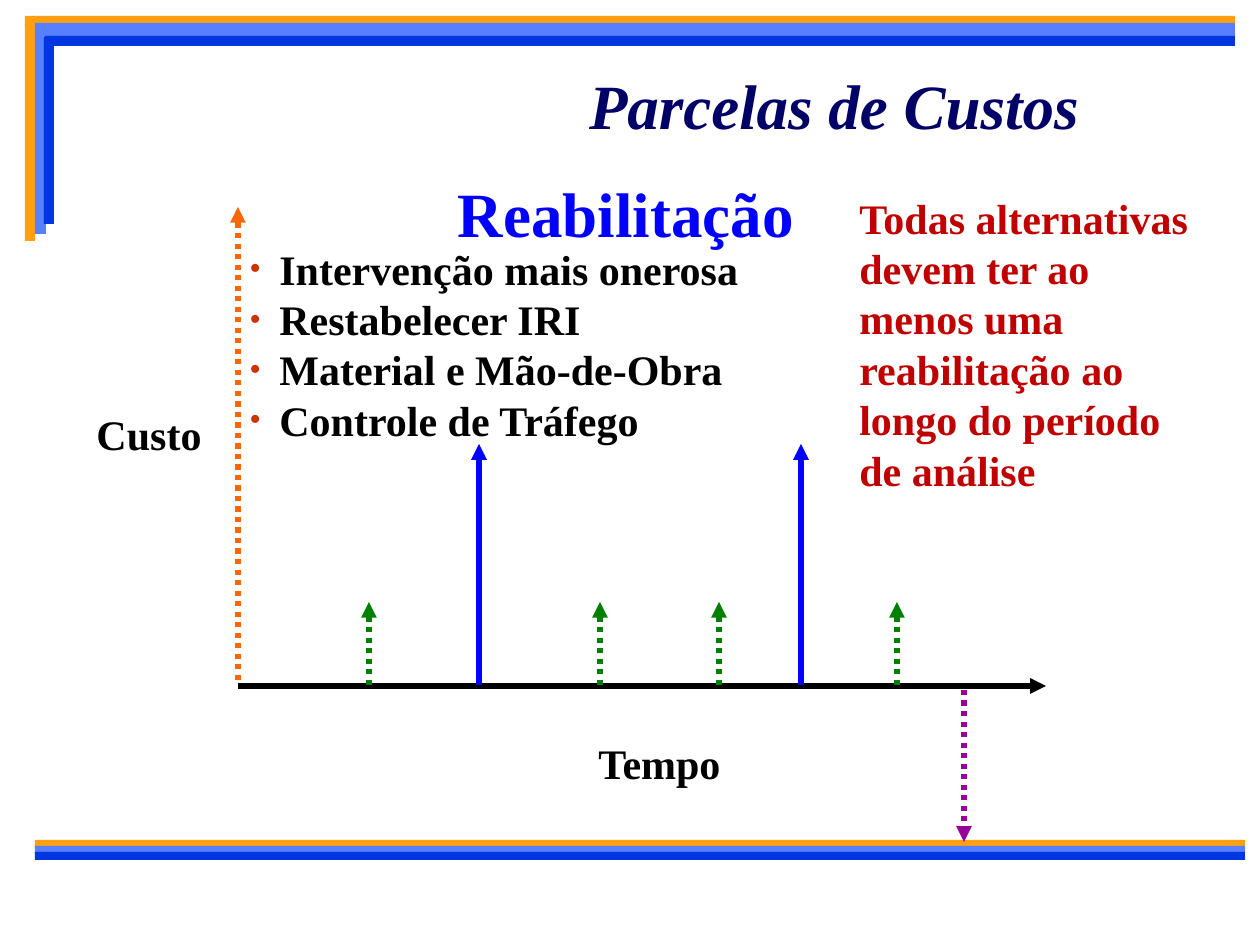
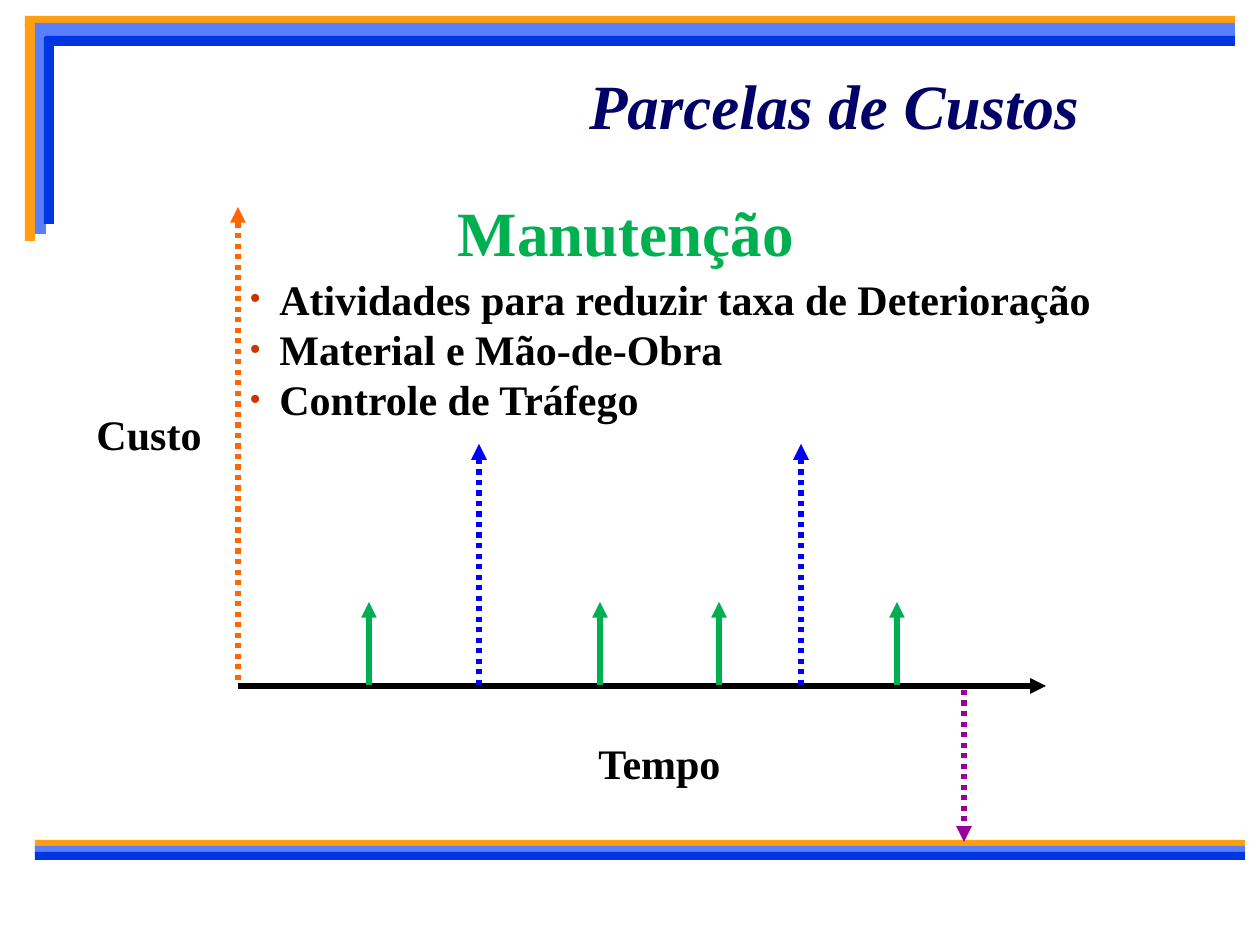
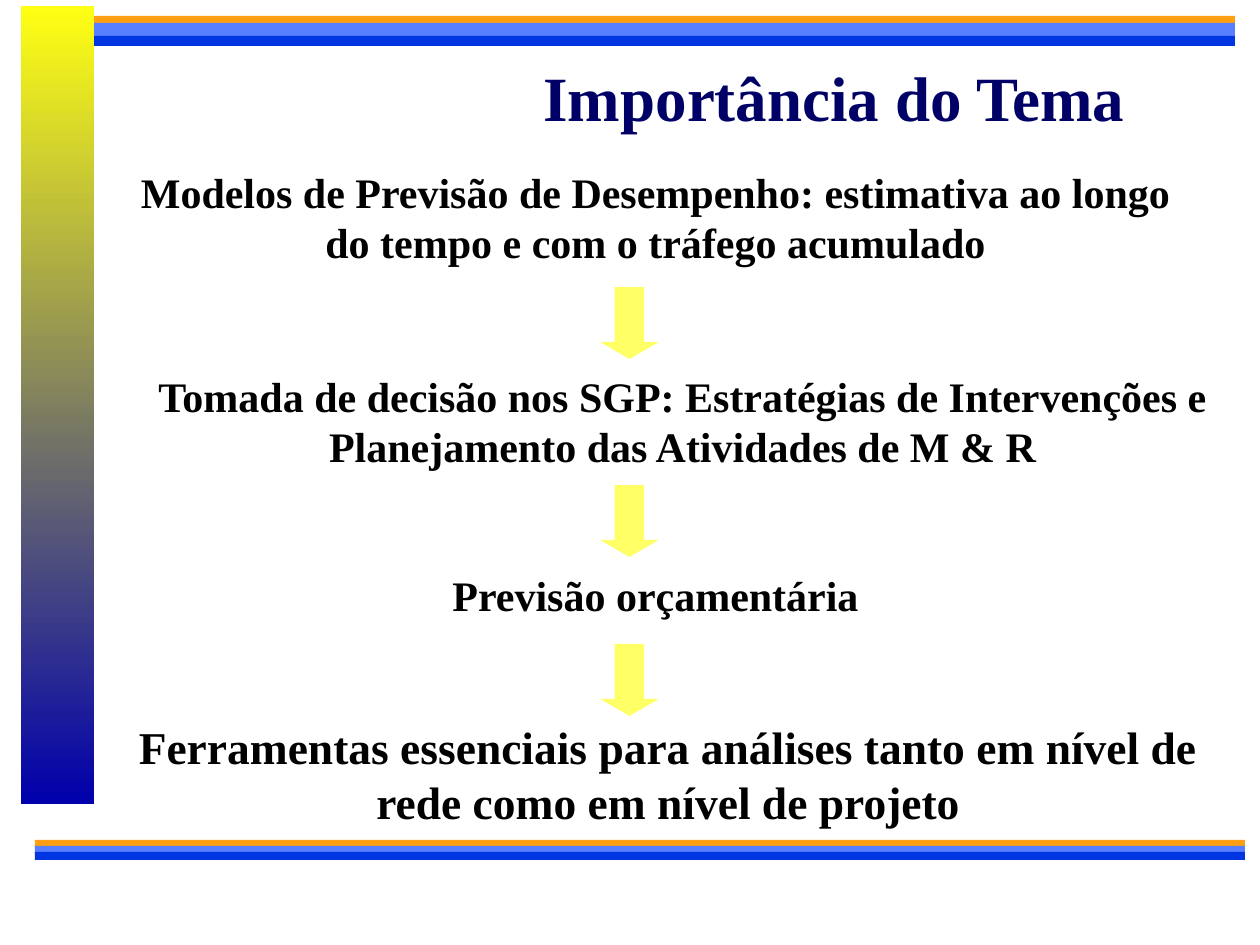
from lxml.etree import SubElement
from pptx import Presentation
from pptx.dml.color import RGBColor
from pptx.enum.dml import MSO_LINE
from pptx.enum.shapes import MSO_CONNECTOR, MSO_SHAPE
from pptx.enum.text import MSO_ANCHOR, MSO_AUTO_SIZE, PP_ALIGN
from pptx.oxml.ns import qn
from pptx.util import Emu, Pt

PX_PER_INCH = 126
FONT = "Times New Roman"
NAVY, BLACK, RED, BLUE = "000066", "000000", "C00000", "0000FF"
DARK_GREEN, GREEN, PURPLE, ORANGE = "008000", "00B050", "990099", "FF6600"
BULLET_RED, ARROW_YELLOW = "CC3300", "FFFF66"
BAND_COLORS = ("FF9F11", "577FFF", "0036E2")
SIDE_BANDS = ((25, 23, 10, 218), (35, 36, 11, 198), (44, 36, 10, 188))
TOP_BANDS = ((25, 16, 1210, 10), (35, 23, 1200, 14), (45, 36, 1190, 10))
BOTTOM_BANDS = tuple((35, 840 + 6 * row, 1210, 8) for row in range(3))
DIAGRAM_BOX = (238, 207, 808, 479)
MAINTENANCE_TIMES = (131, 362, 481, 659)
REHABILITATION_TIMES = (241, 563)


def px(*lengths):
    """Turn pixel lengths into EMU."""
    return [Emu(round(length * 914400 / PX_PER_INCH)) for length in lengths]


def rgb(color):
    """Turn a hex string into a colour."""
    return RGBColor.from_string(color)


def format_font(font, color, **values):
    """Apply the shared bold face, a colour and further format values."""
    for name, value in {"name": FONT, "bold": True, **values}.items():
        setattr(font, name, value)
    font.color.rgb = rgb(color)


def add_block(slide, kind, box, color):
    """Add a plain filled shape without outline."""
    block = slide.shapes.add_shape(kind, *px(*box))
    block.shadow.inherit = False
    block.fill.solid()
    block.fill.fore_color.rgb = rgb(color)
    block.line.fill.background()
    return block


def add_bullet(paragraph):
    """Give a paragraph a hanging red bullet."""
    properties = paragraph._p.get_or_add_pPr()
    indent = px(30)[0]
    properties.set("marL", str(indent))
    properties.set("indent", str(-indent))
    color = SubElement(properties, qn("a:buClr"))
    SubElement(color, qn("a:srgbClr"), val=BULLET_RED)
    SubElement(properties, qn("a:buSzPct"), val="80000")
    SubElement(properties, qn("a:buFont"), typeface=FONT)
    SubElement(properties, qn("a:buChar"), char="•")


def add_text(slide, box, lines, color=BLACK, size=24, align=PP_ALIGN.CENTER,
             wrap=True, bullets=False):
    """Add a text box with one paragraph for each line."""
    frame = slide.shapes.add_textbox(*px(*box)).text_frame
    frame.word_wrap = wrap
    frame.auto_size = MSO_AUTO_SIZE.SHAPE_TO_FIT_TEXT
    for index, line in enumerate(lines):
        paragraph = frame.add_paragraph() if index else frame.paragraphs[0]
        if bullets:
            add_bullet(paragraph)
        paragraph.alignment = align
        run = paragraph.add_run()
        run.text = line
        format_font(run.font, color, size=Pt(size))


def add_arrow(slide, start, end, color, dotted=False):
    """Add a line that ends in a triangle."""
    arrow = slide.shapes.add_connector(MSO_CONNECTOR.STRAIGHT, *px(*start, *end))
    arrow.line.width = Pt(3)
    arrow.line.color.rgb = rgb(color)
    if dotted:
        arrow.line.dash_style = MSO_LINE.ROUND_DOT
    SubElement(arrow.line._get_or_add_ln(), qn("a:tailEnd"), type="triangle")
    SubElement(arrow.element.spPr, qn("a:effectLst"))


def set_title(slide, text, top, height, italic):
    """Place and format the slide title."""
    title = slide.shapes.title
    title.left, title.top, title.width, title.height = px(432, top, 804, height)
    title.text_frame.vertical_anchor = MSO_ANCHOR.MIDDLE
    paragraph = title.text_frame.paragraphs[0]
    paragraph.alignment = PP_ALIGN.CENTER
    run = paragraph.add_run()
    run.text = text
    format_font(run.font, NAVY, size=Pt(36), italic=italic)


def move_bands_to_layout(slide, layout):
    """Draw the frame bands and hand them to the layout."""
    for placeholder in list(layout.placeholders)[1:]:
        layout.shapes.element.remove(placeholder.element)
    for bands in (SIDE_BANDS, TOP_BANDS, BOTTOM_BANDS):
        for box, color in zip(bands, BAND_COLORS):
            band = add_block(slide, MSO_SHAPE.RECTANGLE, box, color)
            layout.shapes.element.append(band.element)


def add_cash_flow(slide, box, maintenance, rehabilitation):
    """Draw the cost and time axes with the cost arrows."""
    left, top, width, height = box
    base = top + height
    add_text(slide, (left + 347, base + 45, 149, 64), ["Tempo"], wrap=False)
    add_text(slide, (left - 155, top + 195, 132, 64), ["Custo"], wrap=False)
    add_arrow(slide, (left, base), (left + width, base), BLACK)
    add_arrow(slide, (left, base - 6), (left, top), ORANGE, dotted=True)
    add_arrow(slide, (left + 726, base + 4), (left + 726, base + 156), PURPLE, dotted=True)
    for times, rise, (color, dotted) in ((MAINTENANCE_TIMES, 84, maintenance),
                                         (REHABILITATION_TIMES, 242, rehabilitation)):
        for time in times:
            add_arrow(slide, (left + time, base - 1), (left + time, base - rise), color, dotted)


def fill_cost_slide(slide, heading, heading_color, heading_top, items, items_box,
                    maintenance, rehabilitation):
    """Fill a slide about one share of the costs."""
    set_title(slide, "Parcelas de Custos", 45, 118, italic=True)
    add_cash_flow(slide, DIAGRAM_BOX, maintenance, rehabilitation)
    left, top = DIAGRAM_BOX[:2]
    add_text(slide, (left + 206, top + heading_top, 364, 89), [heading],
             heading_color, size=36, wrap=False)
    items_top, items_width, items_height = items_box
    add_text(slide, (left - 1, top + items_top, items_width, items_height), items,
             align=PP_ALIGN.LEFT, bullets=True)


def add_side_gradient(slide, box):
    """Add the bar that fades from yellow to blue."""
    bar = add_block(slide, MSO_SHAPE.RECTANGLE, box, ARROW_YELLOW)
    bar.fill.gradient()
    bar.fill.gradient_angle = 270
    for stop, color in zip(bar.fill.gradient_stops, ("FFFF13", "0000AC")):
        stop.color.rgb = rgb(color)


def fill_importance_slide(slide, steps, arrow_tops):
    """Fill the slide with a chain of steps joined by arrows."""
    set_title(slide, "Importância do Tema", 55, 83, italic=False)
    add_side_gradient(slide, (21, 6, 73, 798))
    for box, text, size in steps:
        add_text(slide, box, [text], size=size)
    for top in arrow_tops:
        arrow = add_block(slide, MSO_SHAPE.DOWN_ARROW, (600, top, 59, 72), ARROW_YELLOW)
        arrow.adjustments[0], arrow.adjustments[1] = 0.5, 0.29


def main():
    """Build and save the presentation."""
    deck = Presentation()
    deck.slide_width, deck.slide_height = px(1260, 945)
    layout = deck.slide_layouts[5]
    rehabilitation, maintenance, importance = [deck.slides.add_slide(layout) for _ in range(3)]
    move_bands_to_layout(rehabilitation, layout)

    shared_items = ["Material e Mão-de-Obra", "Controle de Tráfego"]
    fill_cost_slide(rehabilitation, "Reabilitação", BLUE, -39,
                    ["Intervenção mais onerosa", "Restabelecer IRI", *shared_items],
                    (30, 617, 217), (DARK_GREEN, True), (BLUE, False))
    add_text(rehabilitation, (847, 186, 354, 318),
             ["Todas alternativas devem ter ao menos uma reabilitação ao longo "
              "do período de análise"], RED, align=PP_ALIGN.LEFT)

    fill_cost_slide(maintenance, "Manutenção", GREEN, -20,
                    ["Atividades para reduzir taxa de Deterioração", *shared_items],
                    (60, 906, 165), (GREEN, False), (BLUE, True))

    fill_importance_slide(importance, (
        ((105, 160, 1101, 115), "Modelos de Previsão de Desempenho: estimativa ao longo "
                                "do tempo e com o tráfego acumulado", 24),
        ((105, 364, 1155, 115), "Tomada de decisão nos SGP: Estratégias de Intervenções e "
                                "Planejamento das Atividades de M & R", 24),
        ((105, 563, 1101, 63), "Previsão orçamentária", 24),
        ((113, 713, 1111, 123), "Ferramentas essenciais para análises tanto em nível de "
                                "rede como em nível de projeto", 26),
    ), (287, 485, 644))
    deck.save("out.pptx")


if __name__ == "__main__":
    main()
